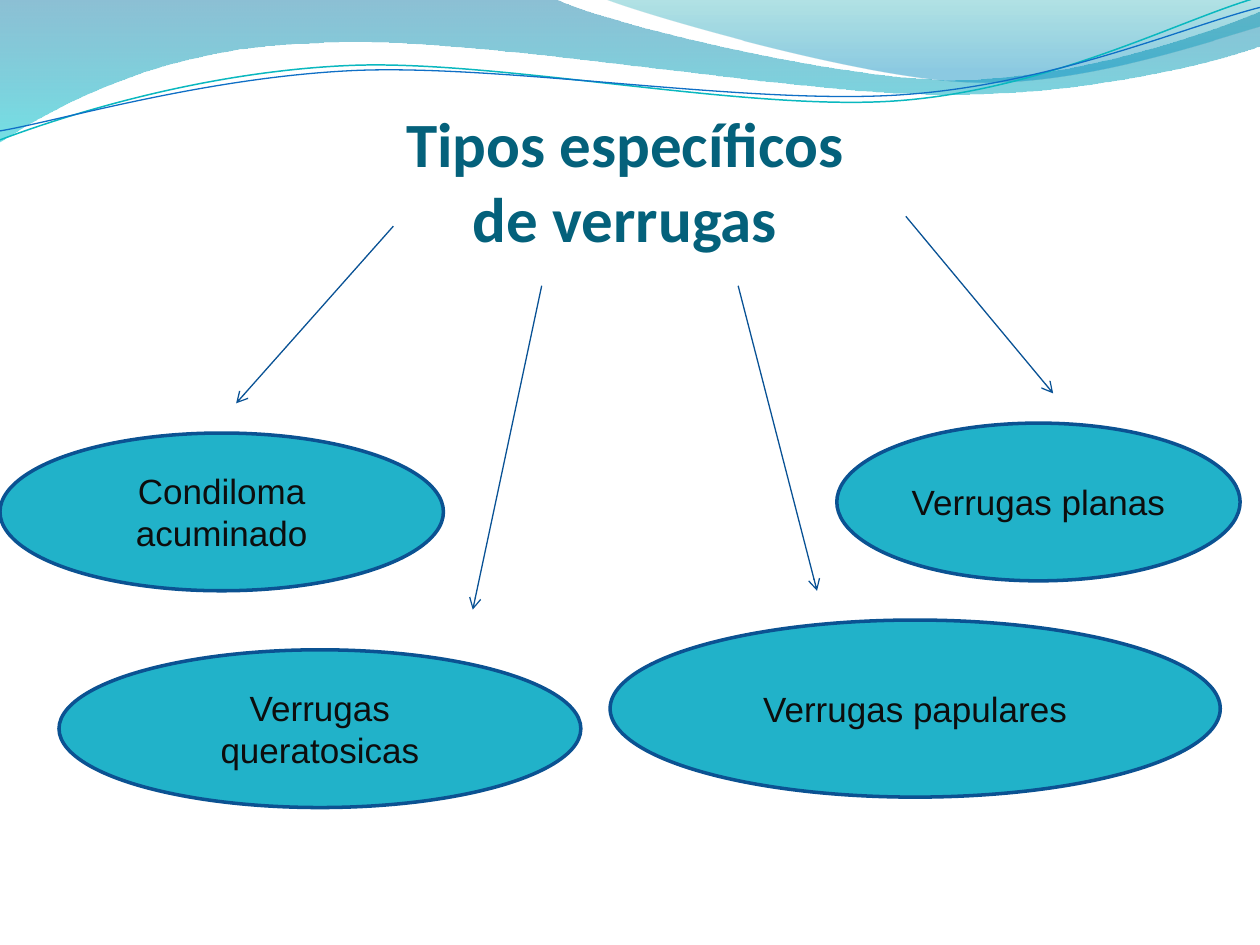
import math
import pptx
import pptx.dml.color
import pptx.enum.shapes
import pptx.enum.text
import pptx.oxml.ns
import pptx.util
from dataclasses import dataclass

Cm, Pt = pptx.util.Cm, pptx.util.Pt
RGB = pptx.dml.color.RGBColor.from_string
qn = pptx.oxml.ns.qn


@dataclass(frozen=True)
class Theme:
    title: str = "04617B"
    text: str = "0D0D0D"
    oval: str = "21B2C9"
    edge: str = "0B5292"
    arrow: str = "095295"
    head: str = "Calibri"
    body: str = "Arial"
    big: int = 36
    small: int = 20
    thick: float = 2
    thin: float = 0.75


THEME = Theme()
SIZE = (25.4, 19.05)
TILT = 357.3
TITLE = ("Tipos específicos de verrugas", (7.14, 1.98, 10.92, 3.33))
TYPES = [
    ("Condiloma acuminado", (0, 8.73, 8.94, 3.18)),
    ("Verrugas queratosicas", (1.19, 13.1, 10.52, 3.18)),
    ("Verrugas planas", (16.87, 8.53, 8.13, 3.18)),
    ("Verrugas papulares", (12.3, 12.5, 12.3, 3.57)),
]
ARROWS = [
    (7.93, 4.56, 4.76, 8.13),
    (10.92, 5.76, 9.53, 12.29),
    (14.88, 5.76, 16.47, 11.91),
    (18.26, 4.36, 21.23, 7.93),
]
BANDS = [
    ([(0, "0074A1", 45), (1, "00C6CF", 55)],
     [(0, 0), (11.18, -0.03),
      (12.09, 0.43, 16.87, 1.6, 19.25, 1.6),
      (21.67, 1.6, 24.33, 0.66, 25.4, 0.23), (25.43, 0.91),
      (24.97, 1.12, 22.1, 1.93, 18.95, 1.9),
      (15.8, 1.9, 9.7, 0.71, 6.53, 0.86),
      (3.28, 0.91, 1.17, 2.11, -0.03, 2.87), (0, 0)]),
    ([(0, "00A1A9", 30), (0.8, "008BBF", 45)],
     [(12.17, -0.03),
      (12.93, 0.28, 17.32, 1.57, 19.53, 1.65),
      (21.74, 1.75, 24.41, 0.81, 25.4, 0.53), (25.4, 0),
      (12.17, -0.03)]),
]
WAVES = [
    ("0AB8BF", 0.85, (12.67, 1.46),
     [(0, 2.82), (1.22, 2.36, 4.01, 1.45, 7.04, 1.32),
      (10.03, 1.19, 15.06, 2.26, 18.11, 2.03),
      (21.16, 1.8, 23.83, 0.38, 25.35, -0.05)]),
    ("0F6FC6", 0.75, (12.69, 1.5),
     [(0, 2.64), (1.19, 2.44, 4.17, 1.55, 7.19, 1.42),
      (10.24, 1.3, 15.16, 2.13, 18.21, 1.91),
      (21.23, 1.7, 23.9, 0.53, 25.4, 0.15)]),
]


def pairs(step):
    """Split a flat step into points."""
    return list(zip(step[::2], step[1::2]))


def level(step, mid):
    """Undo the tilt of a step around a middle point."""
    turn = math.radians(360 - TILT)
    cos, sin = math.cos(turn), math.sin(turn)
    flat = []
    for x, y in pairs(step):
        dx, dy = x - mid[0], y - mid[1]
        flat += [mid[0] + dx * cos - dy * sin, mid[1] + dx * sin + dy * cos]
    return flat


def outline(shapes, route, close):
    """Draw a route of straight and cubic steps as a freeform."""
    dots = [(Cm(x), Cm(y)) for step in route for x, y in pairs(step)]
    form = shapes.build_freeform(*dots[0])
    form.add_line_segments(dots[1:], close=close)
    shape = form.convert_to_shape()
    shape.shadow.inherit = False
    lines = iter(list(shape.element.iter(qn("a:lnTo"))))
    for step in route[1:]:
        first = next(lines)
        if len(step) == 6:
            curve = first.makeelement(qn("a:cubicBezTo"), {})
            first.addprevious(curve)
            for line in (first, next(lines), next(lines)):
                curve.append(line[0])
                line.getparent().remove(line)
    return shape


def add_band(shapes, stops, route):
    """Draw a see-through band shaded from top to bottom."""
    shape = outline(shapes, route, True)
    shape.line.fill.background()
    shape.fill.gradient()
    shape.fill.gradient_angle = 270
    for stop, (place, color, _) in zip(shape.fill.gradient_stops, stops):
        stop.position = place
        stop.color.rgb = RGB(color)
    for node, (_, _, solid) in zip(shape.element.iter(qn("a:srgbClr")), stops):
        node.append(node.makeelement(qn("a:alpha"), {"val": str(solid * 1000)}))


def add_wave(shapes, color, width, mid, route):
    """Draw an open, tilted curve."""
    shape = outline(shapes, [level(step, mid) for step in route], False)
    shape.rotation = TILT
    shape.fill.background()
    shape.line.color.rgb = RGB(color)
    shape.line.width = Pt(width)


def add_arrow(shapes, ends):
    """Draw a thin line with an open head at its end."""
    kind = pptx.enum.shapes.MSO_CONNECTOR.STRAIGHT
    link = shapes.add_connector(kind, *map(Cm, ends))
    link.line.color.rgb = RGB(THEME.arrow)
    link.line.width = Pt(THEME.thin)
    props = link.element.spPr
    line = props.find(qn("a:ln"))
    line.append(line.makeelement(qn("a:tailEnd"), {"type": "arrow"}))
    props.append(props.makeelement(qn("a:effectLst"), {}))


def write(shape, text, face, size, color, bold=False):
    """Set centred, wrapped text in a shape."""
    frame = shape.text_frame
    frame.word_wrap = True
    para = frame.paragraphs[0]
    para.text = text
    para.alignment = pptx.enum.text.PP_ALIGN.CENTER
    font = para.font
    font.name, font.size, font.bold = face, Pt(size), bold
    font.color.rgb = RGB(color)


def add_oval(shapes, text, box):
    """Draw a labelled ellipse."""
    oval = shapes.add_shape(pptx.enum.shapes.MSO_SHAPE.OVAL, *map(Cm, box))
    oval.shadow.inherit = False
    oval.fill.solid()
    oval.fill.fore_color.rgb = RGB(THEME.oval)
    oval.line.color.rgb = RGB(THEME.edge)
    oval.line.width = Pt(THEME.thick)
    oval.text_frame.vertical_anchor = pptx.enum.text.MSO_ANCHOR.MIDDLE
    write(oval, text, THEME.body, THEME.small, THEME.text)


def main():
    """Build the slide and save it."""
    deck = pptx.Presentation()
    deck.slide_width, deck.slide_height = map(Cm, SIZE)
    shapes = deck.slides.add_slide(deck.slide_layouts[6]).shapes
    for band in BANDS:
        add_band(shapes, *band)
    for wave in WAVES:
        add_wave(shapes, *wave)
    text, box = TITLE
    title = shapes.add_textbox(*map(Cm, box))
    write(title, text, THEME.head, THEME.big, THEME.title, True)
    for ends in ARROWS:
        add_arrow(shapes, ends)
    for kind in TYPES:
        add_oval(shapes, *kind)
    deck.save("out.pptx")


if __name__ == "__main__":
    main()
